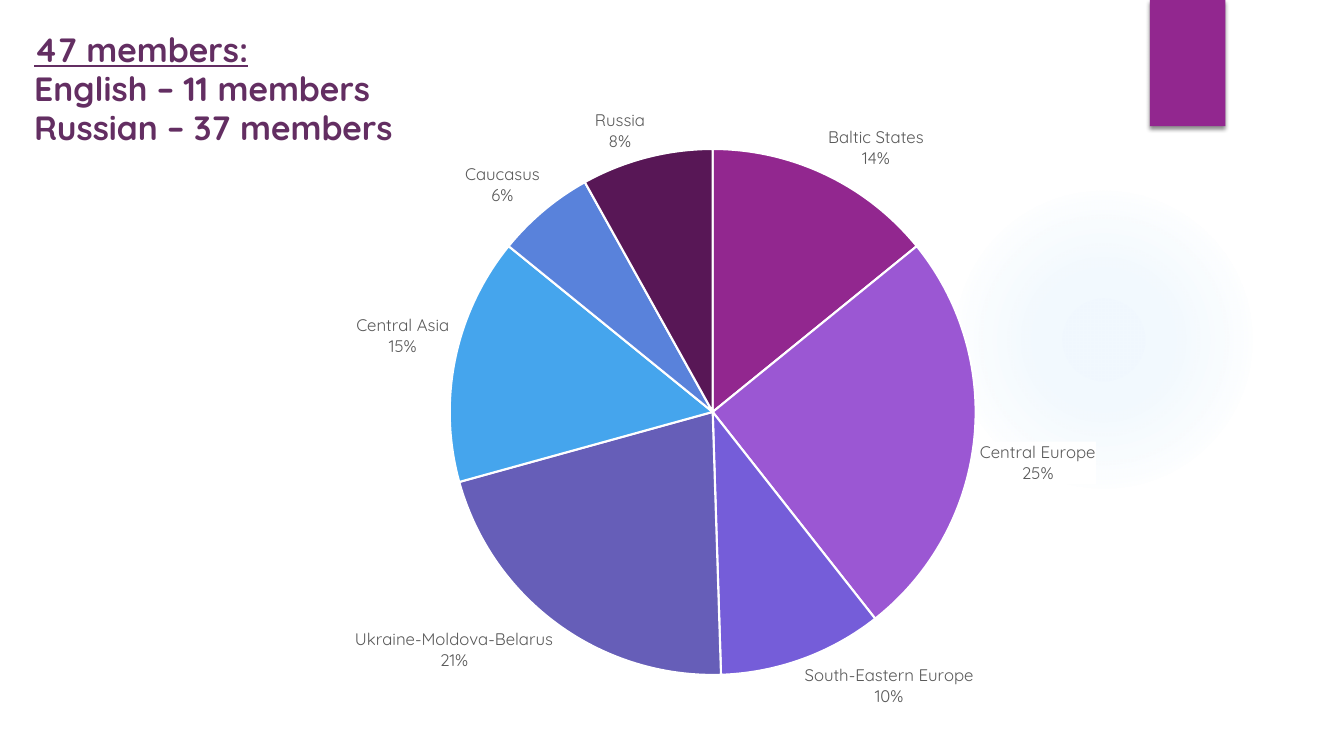
import pptx
import pptx.util
import pptx.oxml
import pptx.oxml.ns
import pptx.chart.data
import pptx.dml.color
import pptx.enum.chart
import pptx.enum.shapes
import pptx.enum.text

Cm, Pt = pptx.util.Cm, pptx.util.Pt
SHAPE = pptx.enum.shapes.MSO_SHAPE

HEAD = "47 members:"
LINES = ["English – 11 members", "Russian – 37 members"]
SHARES = [
    ("Baltic States", 14, "92278F"),
    ("Central Europe", 25, "9B57D3"),
    ("South-Eastern Europe", 10, "755DD9"),
    ("Ukraine-Moldova-Belarus", 21, "665EB8"),
    ("Central Asia", 15, "45A5ED"),
    ("Caucasus", 6, "5982DB"),
    ("Russia", 8, "581756"),
]
GLOW = [(0, 7), (36, 6), (69, 0)]  # stop and opacity, in percent

THEME = {
    "font": "Quicksand", "title": "632E62", "label": "595959",
    "tab": "92278F", "glow": "45A5ED", "white": "FFFFFF",
    "big": Pt(24), "small": Pt(12), "edge": Pt(1.5),
}
PLACE = {
    "glow": (23.9, 4.65, 7.82, 7.82),
    "tab": (28.98, 0, 1.9, 3.18),
    "title": (0.61, 0.66, 10.72, 2.92),
    "chart": (3.12, 2.31, 29.13, 16.05),
}
PIE = (11.34, 3.75, 13.26, 13.26)


def color(name):
    return pptx.dml.color.RGBColor.from_string(THEME.get(name, name))


def box(name):
    return [Cm(size) for size in PLACE[name]]


def put_xml(shape, tag, body, attrs=""):
    """Append a drawing element to the shape's properties."""
    space = pptx.oxml.ns.nsdecls("a")
    node = pptx.oxml.parse_xml(f"<a:{tag} {space}{attrs}>{body}</a:{tag}>")
    shape._element.spPr.append(node)


def tint(code, alpha):
    return f'<a:srgbClr val="{code}"><a:alpha val="{alpha * 1000}"/></a:srgbClr>'


def add_plain(slide, kind, name):
    shape = slide.shapes.add_shape(kind, *box(name))
    shape.line.fill.background()
    return shape


def add_glow(slide):
    disc = add_plain(slide, SHAPE.OVAL, "glow")
    stops = "".join(
        f'<a:gs pos="{stop * 1000}">{tint(THEME["glow"], alpha)}</a:gs>'
        for stop, alpha in GLOW)
    disc.fill.gradient()
    old = disc._element.spPr.find(pptx.oxml.ns.qn("a:gradFill"))
    put_xml(disc, "gradFill", f"<a:gsLst>{stops}</a:gsLst>"
            '<a:path path="circle"><a:fillToRect l="50000" t="50000" '
            'r="50000" b="50000"/></a:path>')
    old.getparent().replace(old, disc._element.spPr[-1])
    disc.shadow.inherit = False


def add_tab(slide):
    tab = add_plain(slide, SHAPE.RECTANGLE, "tab")
    tab.fill.solid()
    tab.fill.fore_color.rgb = color("tab")
    put_xml(tab, "effectLst",
            f'<a:outerShdw blurRad="{Pt(3)}" dist="{Pt(2)}" dir="5400000" '
            f'algn="ctr" rotWithShape="0">{tint("000000", 45)}</a:outerShdw>')


def add_title(slide):
    frame = slide.shapes.add_textbox(*box("title")).text_frame
    frame.word_wrap = True
    frame.vertical_anchor = pptx.enum.text.MSO_ANCHOR.TOP
    para = frame.paragraphs[0]
    para.line_spacing = 0.97
    for i, line in enumerate([HEAD] + LINES):
        if i:
            para.add_line_break()
        run = para.add_run()
        run.text = line
        font = run.font
        font.name, font.size, font.bold = THEME["font"], THEME["big"], True
        font.color.rgb = color("title")
        font.underline = i == 0


def set_area(chart):
    """Fix the pie's square inside the chart frame."""
    left, top, wide, high = PLACE["chart"]
    parts = {"x": (PIE[0] - left) / wide, "y": (PIE[1] - top) / high,
             "w": PIE[2] / wide, "h": PIE[3] / high}
    modes = '<c:layoutTarget val="inner"/><c:xMode val="edge"/><c:yMode val="edge"/>'
    sizes = "".join(f'<c:{key} val="{val:.3f}"/>' for key, val in parts.items())
    space = pptx.oxml.ns.nsdecls("c")
    node = pptx.oxml.parse_xml(
        f"<c:layout {space}><c:manualLayout>{modes}{sizes}</c:manualLayout></c:layout>")
    area = chart._chartSpace.chart.plotArea
    for old in area.findall(pptx.oxml.ns.qn("c:layout")):
        area.remove(old)
    area.insert(0, node)


def add_pie(slide):
    data = pptx.chart.data.CategoryChartData()
    data.categories = [name for name, _, _ in SHARES]
    data.add_series("Series 1", [share for _, share, _ in SHARES])
    kind = pptx.enum.chart.XL_CHART_TYPE.PIE
    chart = slide.shapes.add_chart(kind, *box("chart"), data).chart
    chart.has_legend = chart.has_title = False
    chart.font.name, chart.font.size = THEME["font"], THEME["small"]
    plot = chart.plots[0]
    plot.vary_by_categories = True
    for i, (_, _, code) in enumerate(SHARES):
        look = plot.series[0].points[i].format
        look.fill.solid()
        look.fill.fore_color.rgb = color(code)
        look.line.color.rgb = color("white")
        look.line.width = THEME["edge"]
    labels = plot.series[0].data_labels
    labels.show_percentage = labels.show_category_name = True
    labels.show_value = False
    labels.number_format, labels.number_format_is_linked = "0%", False
    labels.position = pptx.enum.chart.XL_LABEL_POSITION.OUTSIDE_END
    labels.font.name, labels.font.size = THEME["font"], THEME["small"]
    labels.font.color.rgb = color("label")
    space = pptx.oxml.ns.nsdecls("c", "a")
    back = pptx.oxml.parse_xml(
        f'<c:spPr {space}><a:solidFill><a:srgbClr val="{THEME["white"]}"/>'
        "</a:solidFill></c:spPr>")
    root = labels._element
    root.find(pptx.oxml.ns.qn("c:txPr")).addprevious(back)
    gap = pptx.oxml.parse_xml(f"<c:separator {space}>\n</c:separator>")
    root.find(pptx.oxml.ns.qn("c:showBubbleSize")).addnext(gap)
    set_area(chart)


def main():
    deck = pptx.Presentation()
    deck.slide_width, deck.slide_height = Cm(33.87), Cm(19.05)
    slide = deck.slides.add_slide(deck.slide_layouts[6])
    for add in (add_glow, add_tab, add_title, add_pie):
        add(slide)
    deck.save("out.pptx")


if __name__ == "__main__":
    main()
